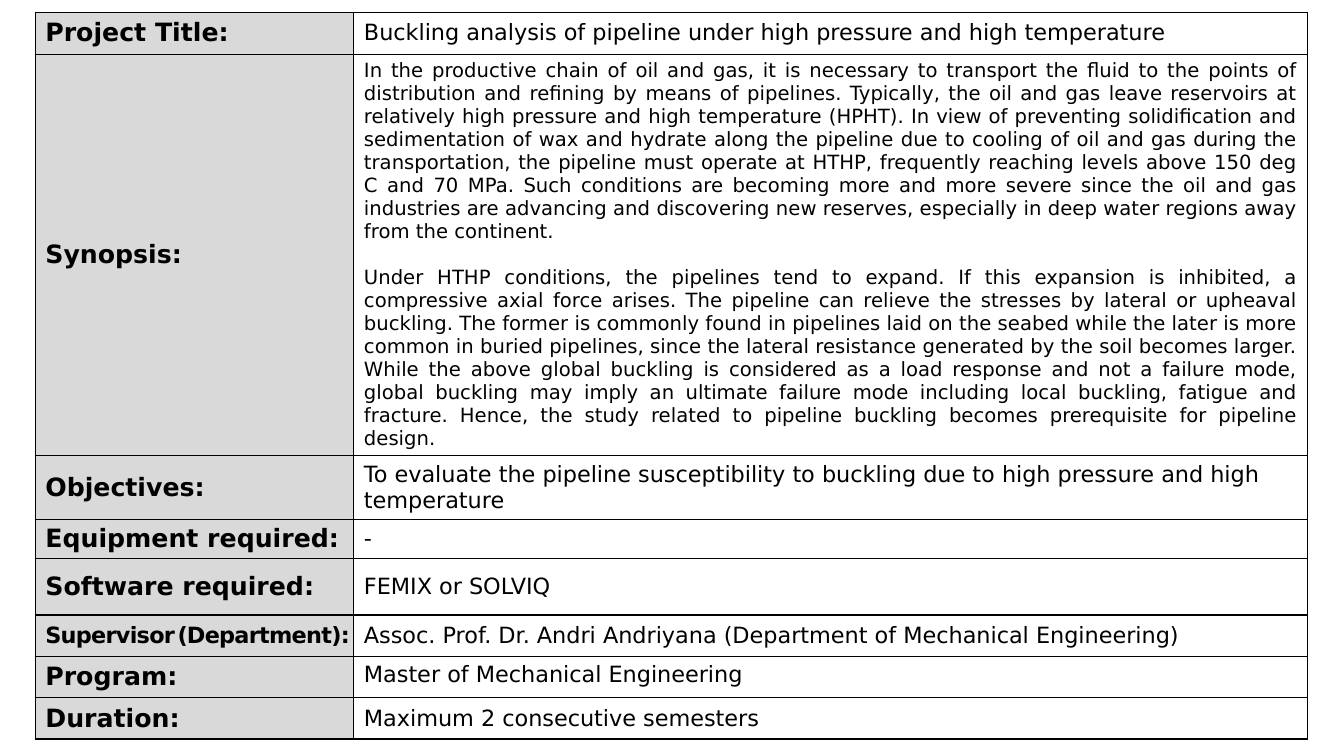
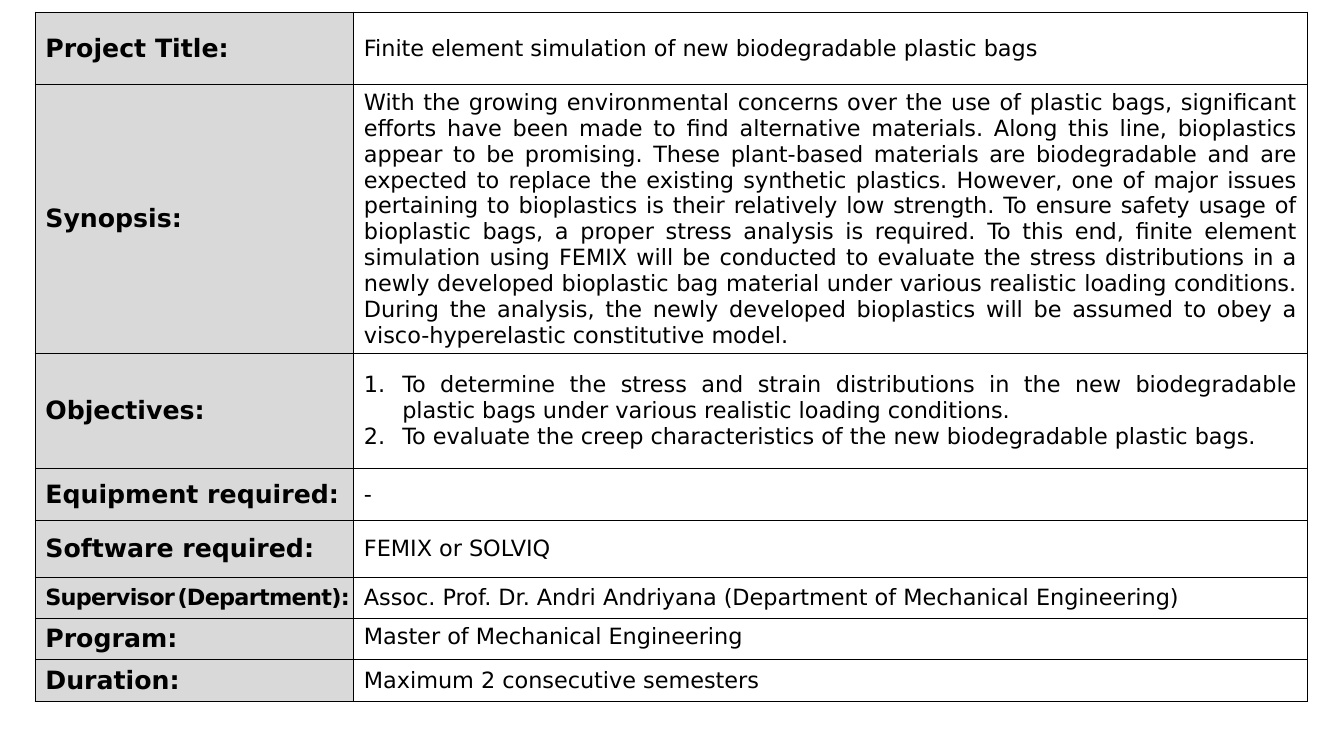
from dataclasses import dataclass

from lxml.etree import SubElement
from pptx import Presentation
from pptx.dml.color import RGBColor
from pptx.enum.text import MSO_ANCHOR as Anchor, PP_ALIGN as Align
from pptx.oxml.ns import qn
from pptx.table import _Cell as Cell
from pptx.util import Inches, Pt


@dataclass(frozen=True)
class Theme:
    font: str = "DejaVu Sans"
    ink: RGBColor = RGBColor(0x00, 0x00, 0x00)
    label_fill: RGBColor = RGBColor(0xD9, 0xD9, 0xD9)
    label_size: float = 18
    body_size: float = 16
    dense_size: float = 14
    gap_size: float = 5
    border_width: float = 1


@dataclass(frozen=True)
class Run:
    text: str
    size: float
    spacing: float = 0


@dataclass(frozen=True)
class Row:
    label: str | tuple[Run, ...]
    paragraphs: tuple[str, ...]
    height: float
    size: float = Theme.body_size
    justified: bool = False
    numbered: bool = False
    paragraph_gap: float = 0
    anchor: Anchor = Anchor.MIDDLE


THEME = Theme()
LEFT, TOP = 0.35, 0.12
COLUMN_WIDTHS = (3.16, 9.46)
NUMBER_INDENT = 0.38

SUPERVISOR_LABEL = (
    Run("Supervisor", THEME.body_size, -0.5),
    Run(" ", THEME.gap_size, -0.5),
    Run("(Department):", THEME.body_size, -0.5),
)

COMMON_ROWS = (
    Row("Software required:", ("FEMIX or SOLVIQ",), 0.56),
    Row(SUPERVISOR_LABEL,
        ("Assoc. Prof. Dr. Andri Andriyana (Department of Mechanical Engineering)",), 0.41),
    Row("Program:", ("Master of Mechanical Engineering",), 0.41, anchor=Anchor.TOP),
    Row("Duration:", ("Maximum 2 consecutive semesters",), 0.41),
)

PIPELINE_ROWS = (
    Row("Project Title:",
        ("Buckling analysis of pipeline under high pressure and high temperature",), 0.42),
    Row("Synopsis:", (
        "In the productive chain of oil and gas, it is necessary to transport the fluid to the "
        "points of distribution and refining by means of pipelines. Typically, the oil and gas "
        "leave reservoirs at relatively high pressure and high temperature (HPHT). In view of "
        "preventing solidification and sedimentation of wax and hydrate along the pipeline due "
        "to cooling of oil and gas during the transportation, the pipeline must operate at HTHP, "
        "frequently reaching levels above 150 deg C and 70 MPa. Such conditions are becoming "
        "more and more severe since the oil and gas industries are advancing and discovering new "
        "reserves, especially in deep water regions away from the continent.",
        "Under HTHP conditions, the pipelines tend to expand. If this expansion is inhibited, a "
        "compressive axial force arises. The pipeline can relieve the stresses by lateral or "
        "upheaval buckling. The former is commonly found in pipelines laid on the seabed while "
        "the later is more common in buried pipelines, since the lateral resistance generated by "
        "the soil becomes larger. While the above global buckling is considered as a load "
        "response and not a failure mode, global buckling may imply an ultimate failure mode "
        "including local buckling, fatigue and fracture. Hence, the study related to pipeline "
        "buckling becomes prerequisite for pipeline design.",
    ), 3.98, size=THEME.dense_size, justified=True, paragraph_gap=16.4),
    Row("Objectives:",
        ("To evaluate the pipeline susceptibility to buckling due to high pressure and high "
         "temperature",), 0.63),
    Row("Equipment required:", ("-",), 0.39),
)

BIOPLASTIC_ROWS = (
    Row("Project Title:",
        ("Finite element simulation of new biodegradable plastic bags",), 0.72),
    Row("Synopsis:", (
        "With the growing environmental concerns over the use of plastic bags, significant "
        "efforts have been made to find alternative materials. Along this line, bioplastics "
        "appear to be promising. These plant-based materials are biodegradable and are expected "
        "to replace the existing synthetic plastics. However, one of major issues pertaining to "
        "bioplastics is their relatively low strength. To ensure safety usage of bioplastic "
        "bags, a proper stress analysis is required. To this end, finite element simulation "
        "using FEMIX will be conducted to evaluate the stress distributions in a newly developed "
        "bioplastic bag material under various realistic loading conditions. During the "
        "analysis, the newly developed bioplastics will be assumed to obey a visco-hyperelastic "
        "constitutive model.",
    ), 2.66, justified=True),
    Row("Objectives:", (
        "To determine the stress and strain distributions in the new biodegradable plastic bags "
        "under various realistic loading conditions.",
        "To evaluate the creep characteristics of the new biodegradable plastic bags.",
    ), 1.14, justified=True, numbered=True),
    Row("Equipment required:", ("-",), 0.52),
)


def add_text(paragraph, text: str, *, size: float, bold: bool = False,
             spacing: float = 0) -> None:
    run = paragraph.add_run()
    run.text = text
    font = run.font
    font.name, font.size, font.bold = THEME.font, Pt(size), bold
    font.color.rgb = THEME.ink
    if spacing:
        run._r.get_or_add_rPr().set("spc", str(round(spacing * 100)))


def add_number(paragraph) -> None:
    """Number the paragraph 1., 2., ... with a hanging indent."""
    properties = paragraph._p.get_or_add_pPr()
    properties.set("marL", str(Inches(NUMBER_INDENT)))
    properties.set("indent", str(-Inches(NUMBER_INDENT)))
    SubElement(properties, qn("a:buAutoNum"), type="arabicPeriod")


def add_borders(cell: Cell) -> None:
    properties = cell._tc.get_or_add_tcPr()
    for side in ("lnL", "lnR", "lnT", "lnB"):
        line = SubElement(properties, qn(f"a:{side}"), w=str(Pt(THEME.border_width)))
        fill = SubElement(line, qn("a:solidFill"))
        SubElement(fill, qn("a:srgbClr"), val=str(THEME.ink))


def fill_label(cell: Cell, label: str | tuple[Run, ...]) -> None:
    add_borders(cell)
    cell.fill.solid()
    cell.fill.fore_color.rgb = THEME.label_fill
    cell.vertical_anchor = Anchor.MIDDLE
    if isinstance(label, str):
        runs = (Run(label, THEME.label_size),)
    else:
        runs = label
        cell.margin_right = Inches(0)
    for run in runs:
        add_text(cell.text_frame.paragraphs[0], run.text, size=run.size, bold=True,
                 spacing=run.spacing)


def fill_body(cell: Cell, row: Row) -> None:
    add_borders(cell)
    cell.fill.background()
    cell.vertical_anchor = row.anchor
    frame = cell.text_frame
    for index, text in enumerate(row.paragraphs):
        paragraph = frame.add_paragraph() if index else frame.paragraphs[0]
        if row.numbered:
            add_number(paragraph)
        if row.justified:
            paragraph.alignment = Align.JUSTIFY
        if index and row.paragraph_gap:
            paragraph.space_before = Pt(row.paragraph_gap)
        add_text(paragraph, text, size=row.size)


def add_project_slide(presentation, project_rows: tuple[Row, ...]) -> None:
    slide = presentation.slides.add_slide(presentation.slide_layouts[6])
    rows = project_rows + COMMON_ROWS
    table = slide.shapes.add_table(
        len(rows), len(COLUMN_WIDTHS), Inches(LEFT), Inches(TOP),
        Inches(sum(COLUMN_WIDTHS)), Inches(sum(row.height for row in rows))).table
    table.first_row = table.horz_banding = False
    for column, width in zip(table.columns, COLUMN_WIDTHS):
        column.width = Inches(width)
    for index, row in enumerate(rows):
        table.rows[index].height = Inches(row.height)
        fill_label(table.cell(index, 0), row.label)
        fill_body(table.cell(index, 1), row)


def main() -> None:
    presentation = Presentation()
    presentation.slide_width, presentation.slide_height = Inches(13.33), Inches(7.5)
    for project_rows in (PIPELINE_ROWS, BIOPLASTIC_ROWS):
        add_project_slide(presentation, project_rows)
    presentation.save("out.pptx")


if __name__ == "__main__":
    main()
